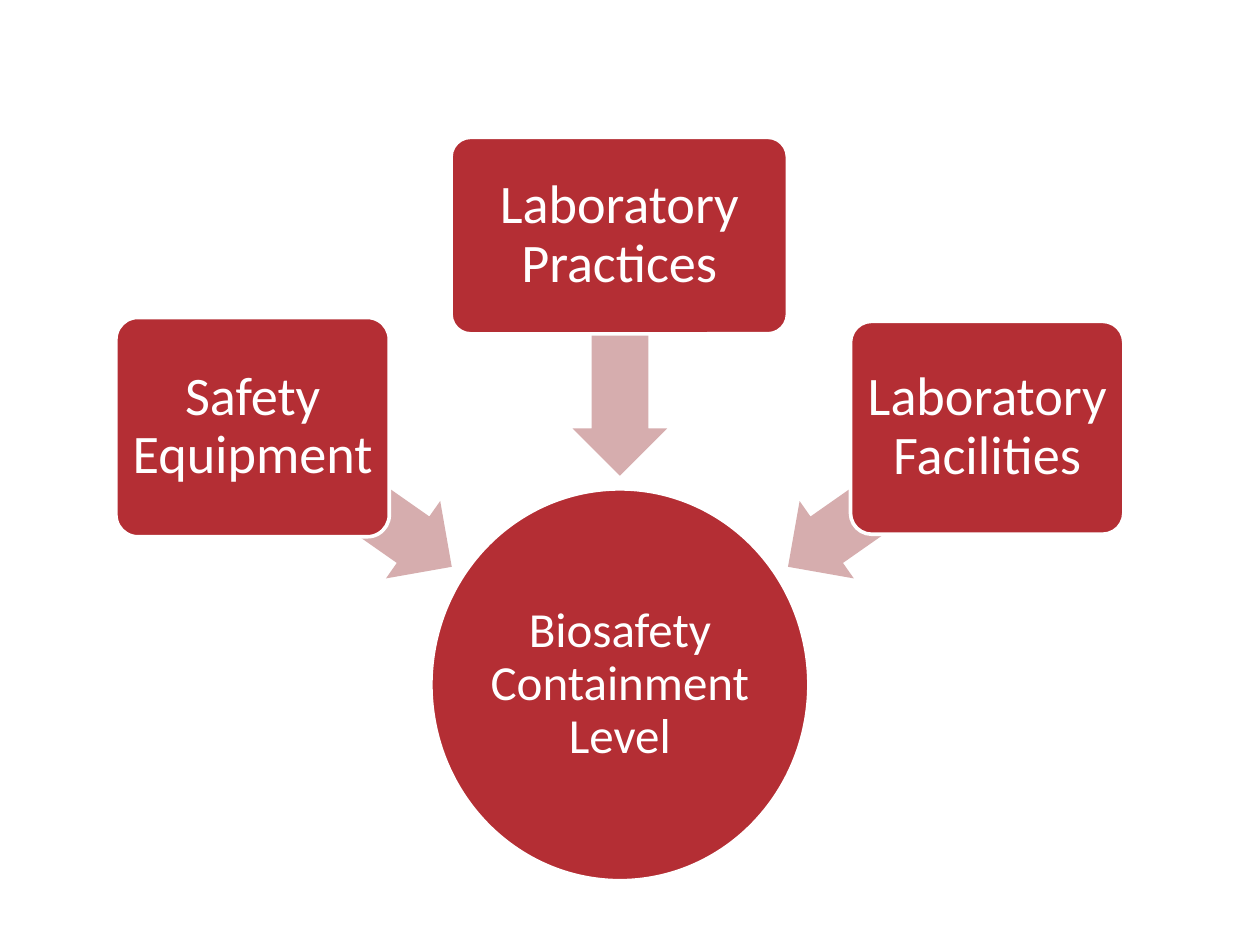
from pptx import Presentation
from pptx.dml.color import RGBColor
from pptx.enum.shapes import MSO_SHAPE
from pptx.enum.text import MSO_ANCHOR, PP_ALIGN
from pptx.util import Inches, Pt

COLORS = {"node": "B42E34", "arrow": "D6ADAE", "white": "FFFFFF"}
FONT = "Calibri"

HUB = ("Biosafety Containment Level", (3.42, 3.88, 3, 3.11))
# Label, box of the factor, box of its arrow, rotation of the arrow
FACTORS = [
    ("Safety Equipment", (0.92, 2.52, 2.17, 1.74), (1.83, 3.57, 1.93, 0.75), 215),
    ("Laboratory Practices", (3.58, 1.09, 2.67, 1.56), (3.97, 2.45, 1.9, 0.75), 270),
    ("Laboratory Facilities", (6.75, 2.55, 2.17, 1.69), (6.08, 3.57, 1.93, 0.75), 325),
]


def color(name):
    return RGBColor.from_string(COLORS[name])


def add_filled_shape(page, kind, box, fill):
    shape = page.shapes.add_shape(kind, *(Inches(length) for length in box))
    shape.shadow.inherit = False
    shape.fill.solid()
    shape.fill.fore_color.rgb = color(fill)
    return shape


def add_node(page, kind, box, label, size, inset):
    """Add a red, white-edged shape with a centred label."""
    node = add_filled_shape(page, kind, box, "node")
    node.line.color.rgb = color("white")
    node.line.width = Pt(2.08)
    frame = node.text_frame
    frame.word_wrap = True
    frame.vertical_anchor = MSO_ANCHOR.MIDDLE
    frame.margin_left = frame.margin_right = Inches(inset)
    frame.margin_top = frame.margin_bottom = Inches(inset)
    para = frame.paragraphs[0]
    para.alignment = PP_ALIGN.CENTER
    para.line_spacing = 0.9
    span = para.add_run()
    span.text = label
    span.font.name = FONT
    span.font.size = Pt(size)
    span.font.color.rgb = color("white")
    return node


def add_hub(page, label, box):
    add_node(page, MSO_SHAPE.OVAL, box, label, 28, 0.02)


def add_arrow(page, box, rotation):
    arrow = add_filled_shape(page, MSO_SHAPE.LEFT_ARROW, box, "arrow")
    arrow.line.fill.background()
    arrow.adjustments[0] = 0.6
    arrow.adjustments[1] = 0.5
    arrow.rotation = rotation


def add_factor(page, label, box):
    factor = add_node(page, MSO_SHAPE.ROUNDED_RECTANGLE, box, label, 31, 0.06)
    factor.adjustments[0] = 0.1


def main():
    deck = Presentation()
    deck.slide_width, deck.slide_height = Inches(10), Inches(7.5)
    page = deck.slides.add_slide(deck.slide_layouts[6])
    add_hub(page, *HUB)
    for label, box, arrow_box, rotation in FACTORS:
        add_arrow(page, arrow_box, rotation)
        add_factor(page, label, box)
    deck.save("out.pptx")


if __name__ == "__main__":
    main()
